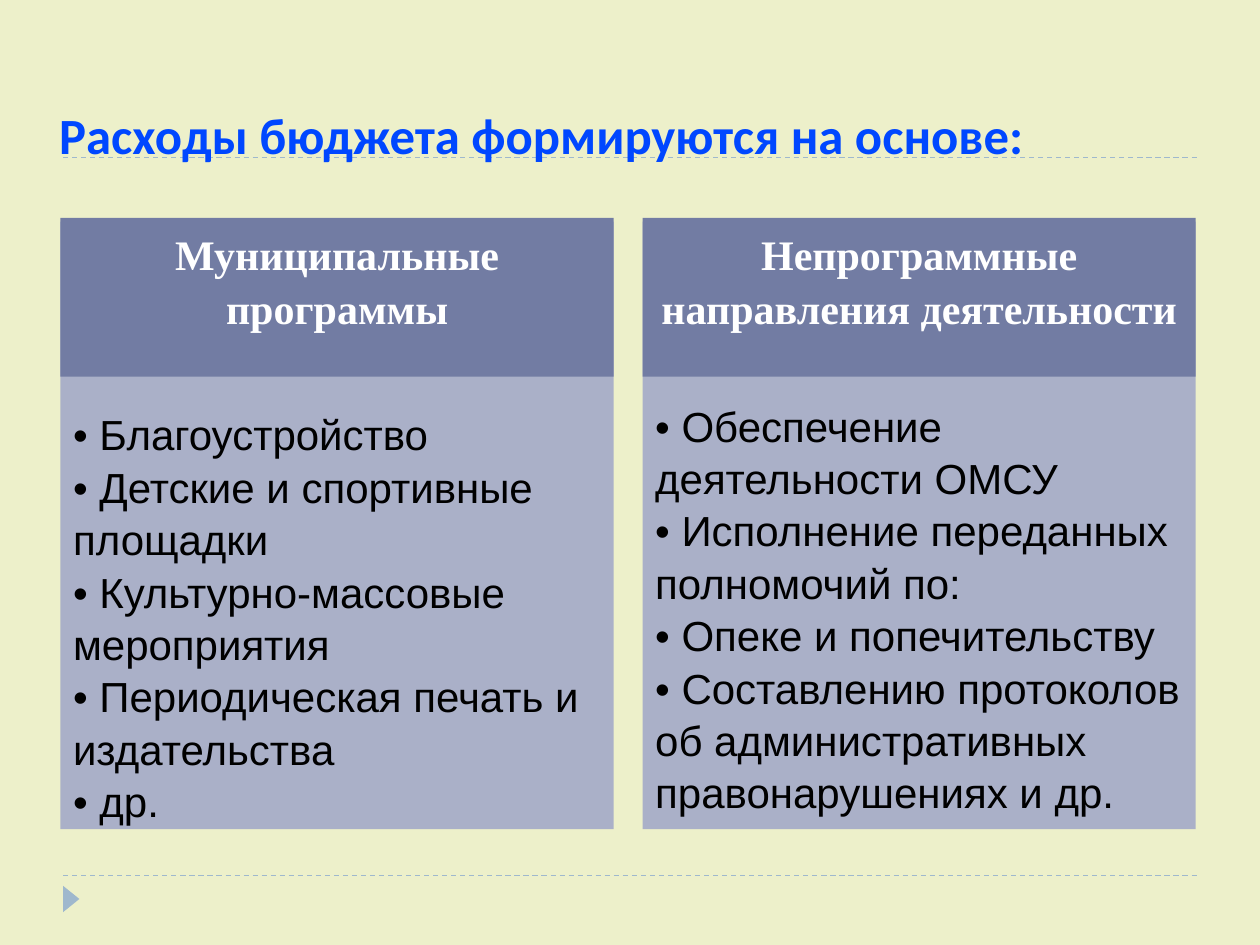
from lxml.etree import SubElement
from pptx import Presentation
from pptx.dml.color import RGBColor as RGB
from pptx.enum.dml import MSO_LINE
from pptx.enum.shapes import MSO_CONNECTOR as LINK, MSO_SHAPE as SHAPE
from pptx.enum.text import MSO_ANCHOR as ANCHOR, MSO_AUTO_SIZE as FIT, PP_ALIGN as ALIGN
from pptx.oxml.ns import qn
from pptx.util import Inches, Pt


class Theme:
    back = RGB.from_string("EDF0CA")
    rule = RGB.from_string("9FB8CD")
    head = RGB.from_string("727CA3")
    body = RGB.from_string("AAB0C8")
    title_font = dict(name="Calibri", size=Pt(29), bold=True, color=RGB.from_string("0047FF"))
    head_font = dict(name="Times New Roman", size=Pt(24), bold=True, color=RGB.from_string("FFFFFF"))
    body_font = dict(name="Arial", size=Pt(24), bold=False, color=RGB.from_string("000000"))


def place(shape, left, top, width, height):
    shape.left, shape.top = Inches(left), Inches(top)
    shape.width, shape.height = Inches(width), Inches(height)


def write(shape, lines, font, align, spacing, inset=0.05):
    """Fill a shape with top-anchored paragraphs, without template bullets."""
    frame = shape.text_frame
    frame.text = "\n".join(lines)
    look = dict(word_wrap=True, auto_size=FIT.NONE, vertical_anchor=ANCHOR.TOP,
                margin_left=Inches(0.1), margin_right=Inches(0.1),
                margin_top=Inches(inset), margin_bottom=Inches(0.05))
    for key, value in look.items():
        setattr(frame, key, value)
    for para in frame.paragraphs:
        props = para._p.get_or_add_pPr()
        props.set("marL", "0")
        props.set("indent", "0")
        SubElement(props, qn("a:buNone"))
        para.alignment, para.line_spacing = align, spacing
        para.space_before = para.space_after = Pt(0)
        for key, value in font.items():
            if key == "color":
                para.font.color.rgb = value
            else:
                setattr(para.font, key, value)


deck = Presentation()
deck.slide_width, deck.slide_height = Inches(10), Inches(7.5)
slide = deck.slides.add_slide(deck.slide_layouts[3])
slide.background.fill.solid()
slide.background.fill.fore_color.rgb = Theme.back
shapes = slide.shapes
title, *bodies = slide.placeholders

# Dashed rules lie behind the text
for y in (1.25, 6.95):
    rule = shapes.add_connector(LINK.STRAIGHT, Inches(0.5), Inches(y), Inches(9.5), Inches(y))
    rule.line.color.rgb = Theme.rule
    rule.line.width = Pt(0.75)
    rule.line.dash_style = MSO_LINE.DASH
    SubElement(rule._element.spPr, qn("a:effectLst"))
    shapes._spTree.insert(2, rule._element)

mark = shapes.add_shape(SHAPE.ISOSCELES_TRIANGLE, Inches(0.46), Inches(7.07), Inches(0.21), Inches(0.13))
mark.rotation = 90
mark.shadow.inherit = False
mark.fill.solid()
mark.fill.fore_color.rgb = Theme.rule
mark.line.fill.background()

place(title, 0.37, 0.77, 9.12, 0.59)
write(title, ["Расходы бюджета формируются на основе:"], Theme.title_font, ALIGN.LEFT, 1.0)

# Left edge, heading, top inset of the list, list items
columns = [
    (0.48, "Муниципальные программы", 1.47, [
        "• Благоустройство",
        "• Детские и спортивные площадки",
        "• Культурно-массовые мероприятия",
        "• Периодическая печать и издательства",
        "• др.",
    ]),
    (5.1, "Непрограммные направления деятельности", 1.4, [
        "• Обеспечение деятельности ОМСУ",
        "• Исполнение переданных полномочий по:",
        "• Опеке и попечительству",
        "• Составлению протоколов об административных правонарушениях и др.",
    ]),
]
for body, (left, label, inset, items) in zip(bodies, columns):
    place(body, left, 1.76, 4.39, 4.82)
    body.fill.solid()
    body.fill.fore_color.rgb = Theme.body
    write(body, items, Theme.body_font, ALIGN.LEFT, 1.04, inset)

    head = shapes.add_shape(SHAPE.RECTANGLE, Inches(left), Inches(1.73), Inches(4.39), Inches(1.26))
    head.shadow.inherit = False
    head.fill.solid()
    head.fill.fore_color.rgb = Theme.head
    head.line.fill.background()
    write(head, [label], Theme.head_font, ALIGN.CENTER, 1.08)

deck.save("out.pptx")
